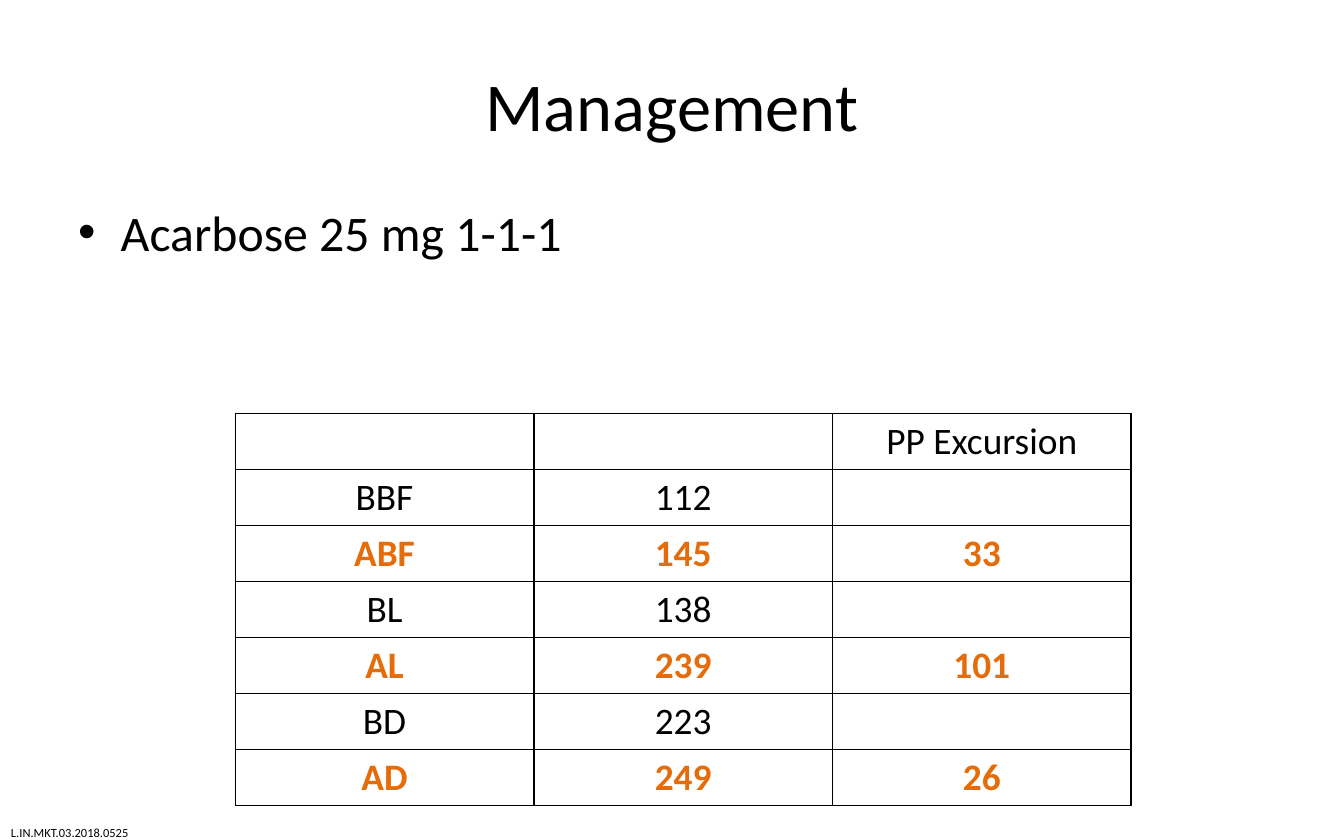
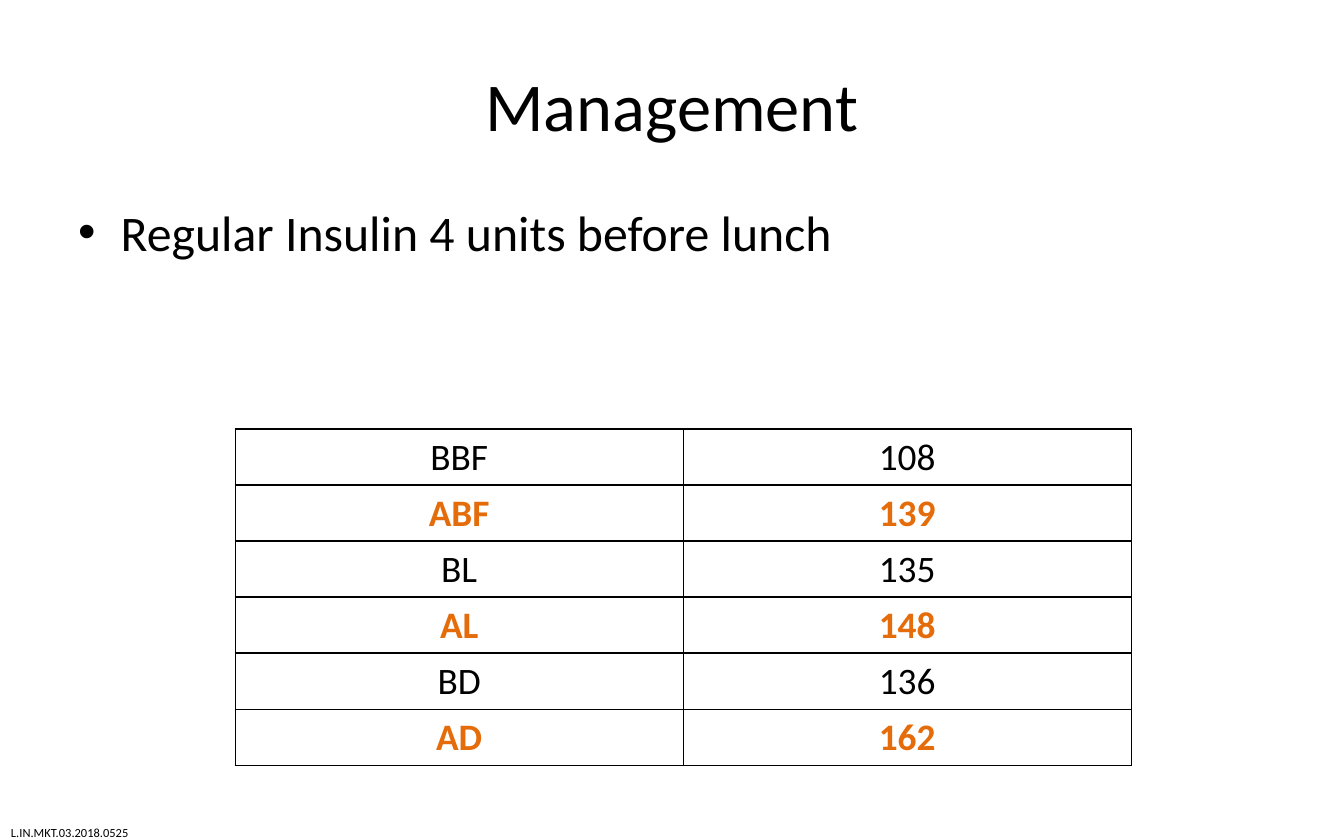
from dataclasses import dataclass

from lxml import etree
from pptx import Presentation
from pptx.dml.color import RGBColor
from pptx.enum import text
from pptx.oxml import ns
from pptx.slide import Slide
from pptx.table import _Cell as Cell
from pptx.text.text import TextFrame, _Paragraph as Paragraph
from pptx.util import Inches, Pt


@dataclass(frozen=True)
class Theme:
    font: str = "Calibri"
    ink: str = "000000"
    after_meal: str = "E46C0A"
    title_size: int = 44
    body_size: int = 32
    table_size: int = 24
    footer_size: int = 8
    border_width: int = 1


@dataclass(frozen=True)
class Box:
    left: float
    top: float
    width: float
    height: float

    def lengths(self) -> list[int]:
        return [Inches(n) for n in (self.left, self.top, self.width, self.height)]


@dataclass(frozen=True)
class ManagementSlide:
    treatment: str
    table_top: float
    readings: list[list[str]]


THEME = Theme()
TITLE = "Management"
FOOTER = "L.IN.MKT.03.2018.0525"
TITLE_BOX = Box(0.6, 0.3, 10.8, 1.25)
BODY_BOX = Box(0.6, 1.75, 10.8, 4.95)
FOOTER_BOX = Box(0, 7.32, 1.4, 0.24)
TABLE_LEFT, TABLE_WIDTH, ROW_HEIGHT = 2.1, 8, 0.5
BULLET_INDENT = Inches(0.38)
AFTER_MEALS = {"ABF", "AL", "AD"}

SLIDES = [
    ManagementSlide("Acarbose 25 mg 1-1-1", 3.69, [
        ["", "", "PP Excursion"],
        ["BBF", "112", ""],
        ["ABF", "145", "33"],
        ["BL", "138", ""],
        ["AL", "239", "101"],
        ["BD", "223", ""],
        ["AD", "249", "26"],
    ]),
    ManagementSlide("Regular Insulin 4 units before lunch", 3.83, [
        ["BBF", "108"],
        ["ABF", "139"],
        ["BL", "135"],
        ["AL", "148"],
        ["BD", "136"],
        ["AD", "162"],
    ]),
]


def format_runs(paragraph: Paragraph, size: int, color: str = THEME.ink,
                bold: bool = False) -> None:
    for run in paragraph.runs:
        run.font.name = THEME.font
        run.font.size = Pt(size)
        run.font.bold = bold
        run.font.color.rgb = RGBColor.from_string(color)


def add_text(slide: Slide, box: Box, words: str, size: int) -> TextFrame:
    frame = slide.shapes.add_textbox(*box.lengths()).text_frame
    frame.word_wrap = True
    frame.text = words
    format_runs(frame.paragraphs[0], size)
    return frame


def add_bullet(paragraph: Paragraph) -> None:
    properties = paragraph._p.get_or_add_pPr()
    properties.set("marL", str(BULLET_INDENT))
    properties.set("indent", str(-BULLET_INDENT))
    font = etree.SubElement(properties, ns.qn("a:buFont"))
    font.set("typeface", "Arial")
    etree.SubElement(properties, ns.qn("a:buChar")).set("char", "•")


def add_borders(cell: Cell) -> None:
    properties = cell._tc.get_or_add_tcPr()
    for side in ("lnL", "lnR", "lnT", "lnB"):
        line = etree.SubElement(properties, ns.qn(f"a:{side}"))
        line.set("w", str(Pt(THEME.border_width)))
        fill = etree.SubElement(line, ns.qn("a:solidFill"))
        etree.SubElement(fill, ns.qn("a:srgbClr")).set("val", THEME.ink)


def fill_cell(cell: Cell, words: str, after_meal: bool) -> None:
    add_borders(cell)
    cell.fill.background()
    cell.margin_left = cell.margin_right = Inches(0.12)
    cell.margin_top = cell.margin_bottom = Inches(0.05)
    cell.text_frame.text = words
    paragraph = cell.text_frame.paragraphs[0]
    paragraph.alignment = text.PP_ALIGN.CENTER
    color = THEME.after_meal if after_meal else THEME.ink
    format_runs(paragraph, THEME.table_size, color, after_meal)


def add_readings(slide: Slide, top: float, readings: list[list[str]]) -> None:
    """Draw the glucose table, with the after-meal rows highlighted."""
    box = Box(TABLE_LEFT, top, TABLE_WIDTH, ROW_HEIGHT * len(readings))
    table = slide.shapes.add_table(
        len(readings), len(readings[0]), *box.lengths()).table
    table.first_row = table.horz_banding = False
    for row, values in enumerate(readings):
        for column, value in enumerate(values):
            fill_cell(table.cell(row, column), value, values[0] in AFTER_MEALS)


def add_management_slide(presentation, content: ManagementSlide) -> None:
    slide = presentation.slides.add_slide(presentation.slide_layouts[6])

    footer = add_text(slide, FOOTER_BOX, FOOTER, THEME.footer_size)
    footer.word_wrap = False
    footer.auto_size = text.MSO_AUTO_SIZE.SHAPE_TO_FIT_TEXT

    title = add_text(slide, TITLE_BOX, TITLE, THEME.title_size)
    title.vertical_anchor = text.MSO_ANCHOR.MIDDLE
    title.paragraphs[0].alignment = text.PP_ALIGN.CENTER

    body = add_text(slide, BODY_BOX, content.treatment, THEME.body_size)
    body.paragraphs[0].space_before = Pt(THEME.body_size * 0.2)
    add_bullet(body.paragraphs[0])

    add_readings(slide, content.table_top, content.readings)


def main() -> None:
    presentation = Presentation()
    presentation.slide_width = Inches(12)
    presentation.slide_height = Inches(7.5)
    for content in SLIDES:
        add_management_slide(presentation, content)
    presentation.save("out.pptx")


if __name__ == "__main__":
    main()
